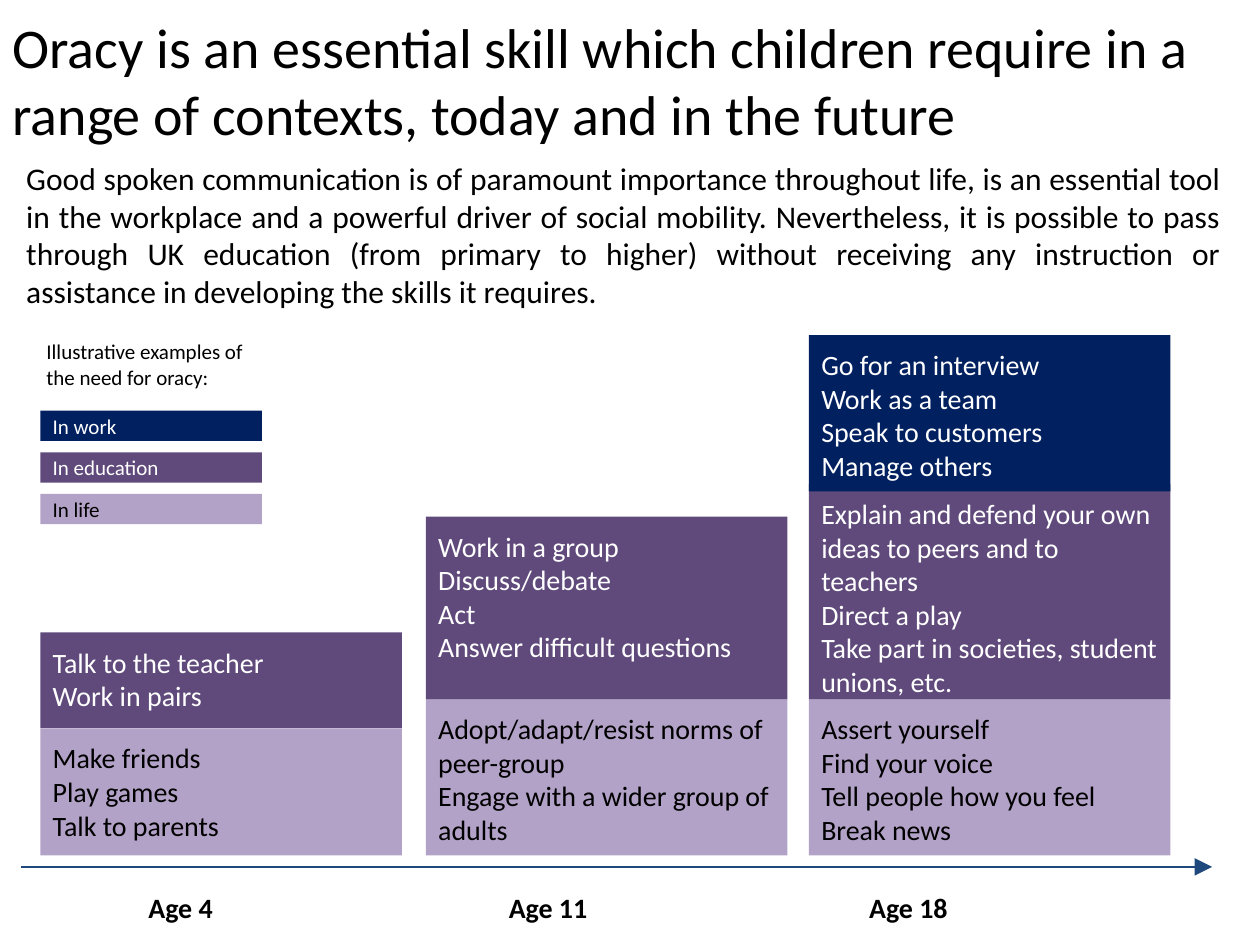
from pptx import Presentation, util as u
from pptx.dml.color import RGBColor
from pptx.enum import shapes, text
from pptx.oxml.ns import qn
from lxml import etree

HUES = {"work": "002060", "school": "604A7B", "life": "B3A2C7",
        "axis": "1F497D", "black": "000000", "white": "FFFFFF"}
INKS = {"work": "white", "school": "white", "life": "black"}


class Deck:
    font = "Calibri"
    inset = 0.1

    def __init__(self, wide, high):
        self.prs = Presentation()
        self.prs.slide_width = u.Inches(wide)
        self.prs.slide_height = u.Inches(high)
        self.slide = self.prs.slides.add_slide(self.prs.slide_layouts[6])

    def hue(self, name):
        return RGBColor.from_string(HUES[name])

    def letter(self, shape, lines, size, ink="black", bold=False,
               align=text.PP_ALIGN.LEFT, anchor=text.MSO_ANCHOR.TOP, pad=inset):
        frame = shape.text_frame
        frame.word_wrap = True
        frame.vertical_anchor = anchor
        frame.margin_left = frame.margin_right = u.Inches(self.inset)
        frame.margin_top = frame.margin_bottom = u.Inches(pad)
        frame.text = "\n".join(lines)
        for para in frame.paragraphs:
            para.alignment = align
            para.font.name = self.font
            para.font.size = u.Pt(size)
            para.font.bold = bold
            para.font.color.rgb = self.hue(ink)

    def label(self, box, line, size, **style):
        shape = self.slide.shapes.add_textbox(*map(u.Inches, box))
        self.letter(shape, [line], size, **style)

    def block(self, box, kind, lines, size, **style):
        shape = self.slide.shapes.add_shape(
            shapes.MSO_SHAPE.RECTANGLE, *map(u.Inches, box))
        shape.shadow.inherit = False
        shape.fill.solid()
        shape.fill.fore_color.rgb = self.hue(kind)
        shape.line.fill.background()
        self.letter(shape, lines, size, ink=INKS[kind], **style)

    def arrow(self, left, right, y):
        line = self.slide.shapes.add_connector(
            shapes.MSO_CONNECTOR.STRAIGHT,
            *map(u.Inches, (left, y, right, y)))
        line.line.color.rgb = self.hue("axis")
        line.line.width = u.Pt(1.5)
        props = line._element.spPr
        etree.SubElement(props.find(qn("a:ln")), qn("a:tailEnd"),
                         type="triangle", w="lg", len="lg")
        etree.SubElement(props, qn("a:effectLst"))


# Each age: left edge, then blocks as kind, top, height, lines
AGES = {
    "Age 4": (0.32, [
        ("school", 5.02, 0.76, ["Talk to the teacher", "Work in pairs"]),
        ("life", 5.78, 1.01, ["Make friends", "Play games", "Talk to parents"]),
    ]),
    "Age 11": (3.38, [
        ("life", 5.55, 1.24, ["Adopt/adapt/resist norms of peer-group",
                              "Engage with a wider group of adults"]),
        ("school", 4.1, 1.45, ["Work in a group", "Discuss/debate", "Act",
                               "Answer difficult questions"]),
    ]),
    "Age 18": (6.42, [
        ("life", 5.55, 1.24, ["Assert yourself", "Find your voice",
                              "Tell people how you feel", "Break news"]),
        ("school", 3.84, 1.71, [
            "Explain and defend your own ideas to peers and to teachers",
            "Direct a play", "Take part in societies, student unions, etc."]),
        ("work", 2.66, 1.24, ["Go for an interview", "Work as a team",
                              "Speak to customers", "Manage others"]),
    ]),
}
KEYS = {"work": "In work", "school": "In education", "life": "In life"}


def main():
    deck = Deck(10, 7.5)

    # Title and introduction
    deck.label((0, 0, 9.79, 1.08), "Oracy is an essential skill which children "
               "require in a range of contexts, today and in the future", 32)
    deck.label((0.11, 1.16, 9.68, 1.25),
               "Good spoken communication is of paramount importance throughout "
               "life, is an essential tool in the workplace and a powerful driver "
               "of social mobility. Nevertheless, it is possible to pass through "
               "UK education (from primary to higher) without receiving any "
               "instruction or assistance in developing the skills it requires.",
               18, align=text.PP_ALIGN.JUSTIFY)

    # Legend
    deck.label((0.27, 2.59, 1.81, 0.54),
               "Illustrative examples of the need for oracy:", 12)
    for row, (kind, name) in enumerate(KEYS.items()):
        deck.block((0.32, 3.26 + 0.33 * row, 1.76, 0.24), kind, [name], 12,
                   anchor=text.MSO_ANCHOR.MIDDLE, pad=0)

    # Columns of blocks above the age axis
    deck.arrow(0.17, 9.62, 6.88)
    for col, (age, (left, blocks)) in enumerate(AGES.items()):
        for kind, top, high, lines in blocks:
            deck.block((left, top, 2.87, high), kind, lines, 16)
        deck.label((1.08 + 2.86 * col, 6.97, 1.34, 0.45), age, 16, bold=True)

    deck.prs.save("out.pptx")


if __name__ == "__main__":
    main()
